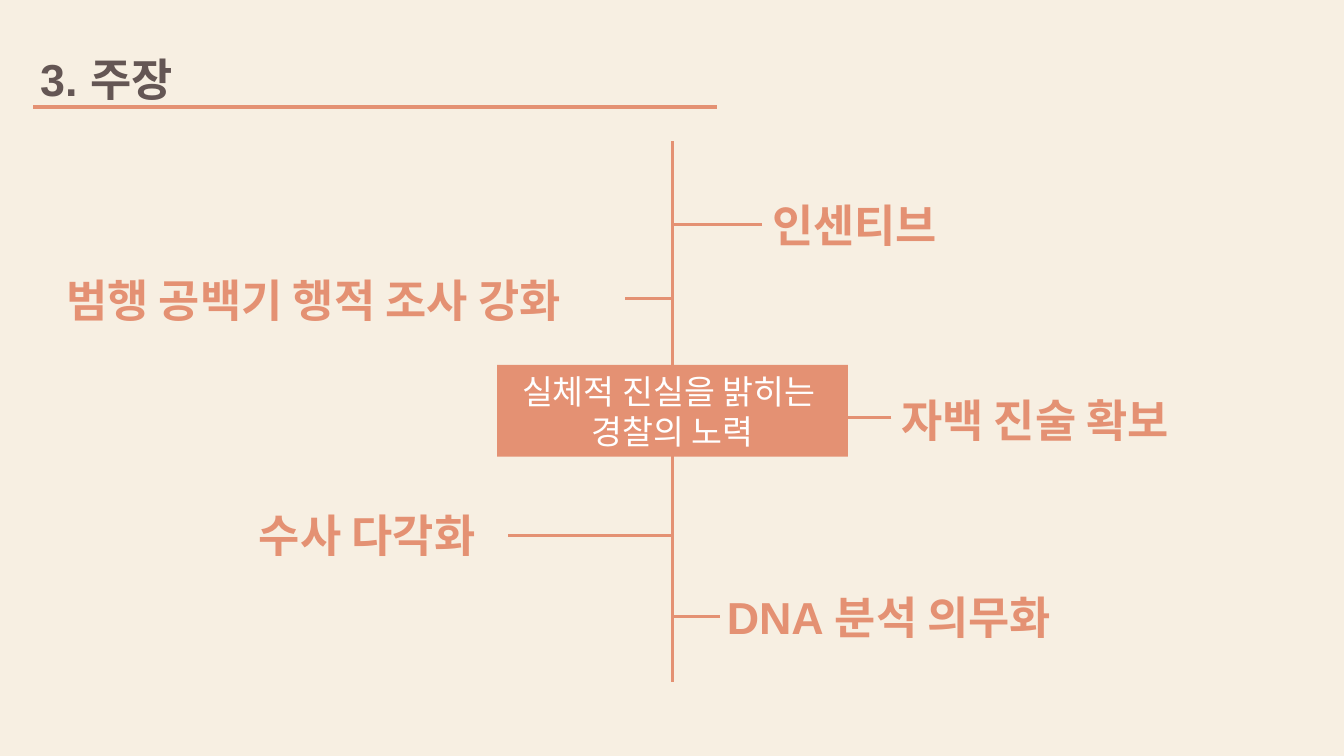
import pptx
import pptx.dml.color
import pptx.enum.shapes
import pptx.enum.text
import pptx.oxml
import pptx.oxml.ns
import pptx.util

PX = 9144
CORAL, BROWN, CREAM, WHITE = "E49173", "645654", "F7EFE2", "FFFFFF"
SPINE_X = 667
LABEL_HEIGHT = 64
CLAIMS = [
    ("범행 공백기 행적 조사 강화", 56, 266, 564, (620, 296), None),
    ("수사 다각화", 247, 499, 257, (504, 531), 3),
    ("자백 진술 확보", 884, 385, 314, (884, 414), None),
    ("인센티브", 756, 191, 200, (756, 223), 1),
    ("DNA 분석 의무화", 711, 580, 365, (714, 612), None),
]


def px(length):
    """Turn a length in px into EMU."""
    return pptx.util.Emu(length * PX)


def colour(value):
    """Turn a hex string into a colour."""
    return pptx.dml.color.RGBColor.from_string(value)


def style_text(frame, size, ink, bold=False):
    """Format every span of a text frame."""
    for para in frame.paragraphs:
        for span in para.runs:
            span.font.name = "Arial"
            span.font.size = pptx.util.Pt(size)
            span.font.bold = bold
            span.font.color.rgb = colour(ink)


def add_line(page, start, end, width=2.25):
    """Draw a straight coral line between two points."""
    line = page.shapes.add_connector(
        pptx.enum.shapes.MSO_CONNECTOR.STRAIGHT, *map(px, start + end))
    line.line.color.rgb = colour(CORAL)
    line.line.width = pptx.util.Pt(width)
    properties = line._element.spPr
    properties.append(pptx.oxml.parse_xml(
        "<a:effectLst %s/>" % pptx.oxml.ns.nsdecls("a")))
    return line


def add_label(page, text, left, top, width, ink):
    """Place a bold one-line label."""
    box = page.shapes.add_textbox(*map(px, (left, top, width, LABEL_HEIGHT)))
    frame = box.text_frame
    frame.text = text
    frame.word_wrap = False
    frame.auto_size = pptx.enum.text.MSO_AUTO_SIZE.SHAPE_TO_FIT_TEXT
    style_text(frame, 32, ink, True)
    return box


def add_centre(page, text, left, top, width, height):
    """Place the filled box that states the theme."""
    box = page.shapes.add_shape(
        pptx.enum.shapes.MSO_SHAPE.RECTANGLE,
        *map(px, (left, top, width, height)))
    box.shadow.inherit = False
    box.fill.solid()
    box.fill.fore_color.rgb = colour(CORAL)
    box.line.fill.background()
    frame = box.text_frame
    frame.text = text
    frame.word_wrap = True
    frame.auto_size = pptx.enum.text.MSO_AUTO_SIZE.SHAPE_TO_FIT_TEXT
    for para in frame.paragraphs:
        para.alignment = pptx.enum.text.PP_ALIGN.CENTER
    style_text(frame, 24, WHITE)


def add_claim(page, text, left, top, width, tip, side):
    """Place a claim and the branch that ties it to the spine."""
    box = add_label(page, text, left, top, width, CORAL)
    branch = add_line(page, tip, (SPINE_X, tip[1]))
    if side is not None:
        branch.begin_connect(box, side)


def main():
    """Build the slide and save it."""
    deck = pptx.Presentation()
    deck.slide_width, deck.slide_height = px(1333), px(750)
    page = deck.slides.add_slide(deck.slide_layouts[6])
    page.background.fill.solid()
    page.background.fill.fore_color.rgb = colour(CREAM)
    add_line(page, (33, 106), (711, 106), 3)
    add_label(page, "3. 주장", 30, 46, 160, BROWN)
    add_line(page, (SPINE_X, 140), (SPINE_X, 677))
    for claim in CLAIMS:
        add_claim(page, *claim)
    add_centre(page, "실체적 진실을 밝히는 \n경찰의 노력", 493, 362, 348, 91)
    deck.save("out.pptx")


if __name__ == "__main__":
    main()
